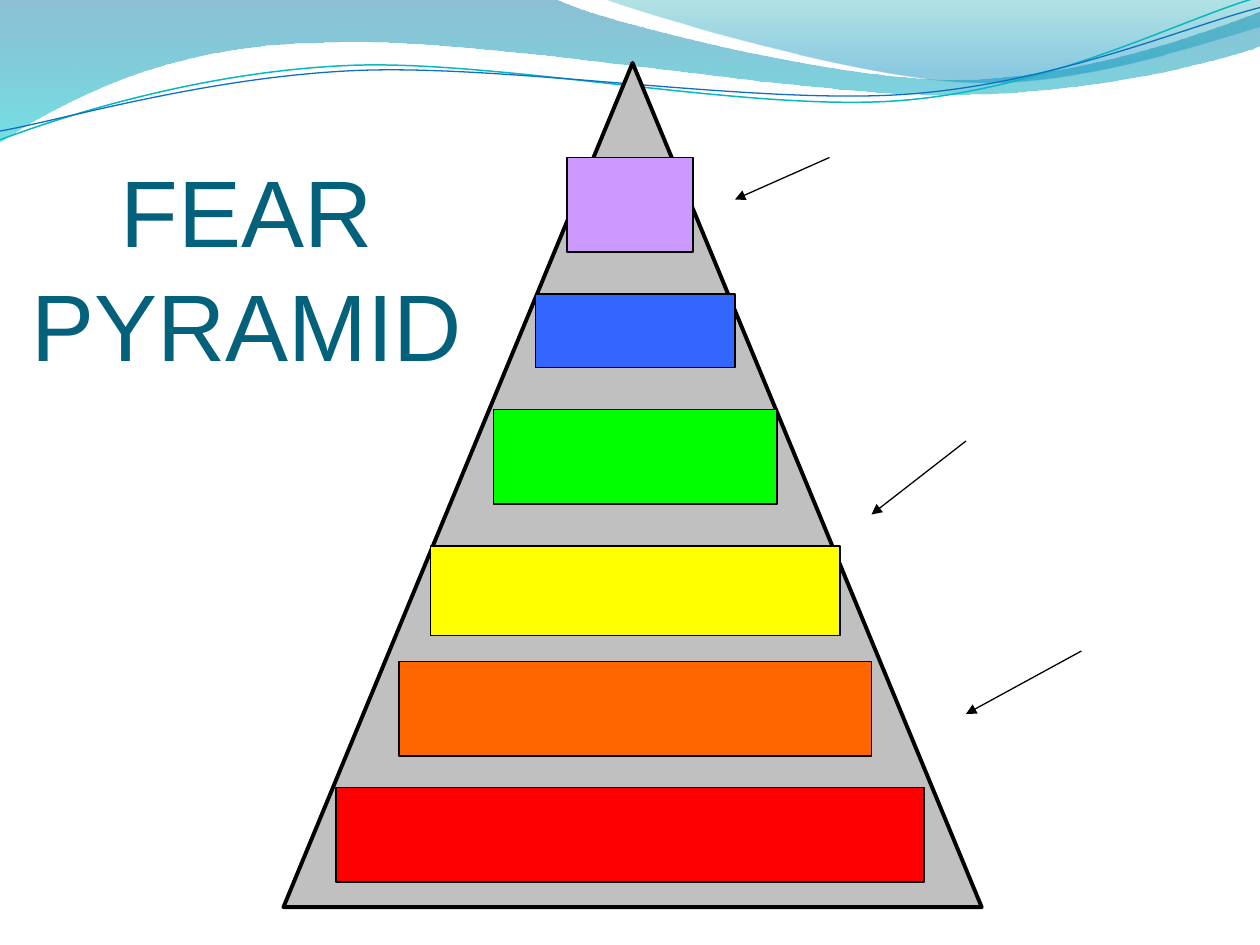
import pptx
import pptx.dml.color
import pptx.enum.shapes
import pptx.enum.text
import pptx.oxml.ns
import pptx.util
from lxml import etree

COLUMNS, ROWS = 120, 90
UNIT = pptx.util.Inches(10) // COLUMNS
HUNDREDTH = pptx.util.Inches(0.01)
SHAPES = pptx.enum.shapes.MSO_SHAPE

BACK_WAVE = [
    [(0, -1)],
    [(440, -1)],
    [(476, 17), (664, 63), (758, 63)],
    [(853, 63), (958, 26), (1000, 9)],
    [(1001, 36)],
    [(983, 44), (870, 76), (746, 75)],
    [(622, 75), (382, 28), (257, 34)],
    [(129, 35), (46, 83), (-1, 113)],
]
FRONT_WAVE = [
    [(479, -1)],
    [(509, 11), (682, 62), (769, 65)],
    [(856, 69), (961, 32), (1000, 21)],
    [(1000, 0)],
]
TEAL_STRAND = [
    [(0, 111)],
    [(48, 93), (158, 57), (277, 52)],
    [(395, 47), (593, 89), (713, 80)],
    [(833, 71), (938, 15), (998, -2)],
]
BLUE_STRAND = [
    [(0, 104)],
    [(47, 96), (164, 61), (283, 56)],
    [(403, 51), (597, 83), (717, 75)],
    [(836, 67), (941, 21), (1000, 6)],
]
LEVELS = [
    ("FF0000", 32, 75, 56, 9),
    ("FF6600", 38, 63, 45, 9),
    ("FFFF00", 41, 52, 39, 8.5),
    ("00FF00", 47, 39, 27, 9),
    ("3366FF", 51, 28, 19, 7),
    ("CC99FF", 54, 15, 12, 9),
]
ARROWS = [(103, 62, 92, 68), (79, 15, 70, 19), (92, 42, 83, 49)]


def rgb(value):
    return pptx.dml.color.RGBColor.from_string(value)


def grid(*cells):
    return [round(cell * UNIT) for cell in cells]


def set_line(line, color, width):
    line.color.rgb = rgb(color)
    line.width = pptx.util.Pt(width)


def add_xml(parent, tag, **attributes):
    return etree.SubElement(parent, pptx.oxml.ns.qn(tag), **attributes)


def bend(shape, segments):
    outline = next(shape.element.iter(pptx.oxml.ns.qn("a:path")))
    steps = iter(list(outline)[1:])
    for segment in segments[1:]:
        lines = [next(steps) for _ in segment]
        if len(lines) == 3:
            curve = etree.Element(pptx.oxml.ns.qn("a:cubicBezTo"))
            lines[0].addprevious(curve)
            for line in lines:
                curve.append(line[0])
                outline.remove(line)


def add_outline(page, segments, close):
    start, *points = [point for segment in segments for point in segment]
    builder = page.shapes.build_freeform(*start, scale=HUNDREDTH)
    builder.add_line_segments(points, close=close)
    shape = builder.convert_to_shape()
    shape.shadow.inherit = False
    bend(shape, segments)
    return shape


def add_wave(page, segments, stops):
    wave = add_outline(page, segments, True)
    wave.line.fill.background()
    wave.fill.gradient()
    wave.fill.gradient_angle = 270
    for stop, (position, color, _) in zip(wave.fill.gradient_stops, stops):
        stop.position = position
        stop.color.rgb = rgb(color)
    colors = wave.element.spPr.iter(pptx.oxml.ns.qn("a:srgbClr"))
    for node, (_, _, opacity) in zip(colors, stops):
        add_xml(node, "a:alpha", val=str(opacity * 1000))


def add_strand(page, segments, color, width):
    strand = add_outline(page, segments, False)
    strand.fill.background()
    set_line(strand.line, color, width)


def add_block(page, kind, color, cells, width):
    block = page.shapes.add_shape(kind, *grid(*cells))
    block.shadow.inherit = False
    block.fill.solid()
    block.fill.fore_color.rgb = rgb(color)
    set_line(block.line, "000000", width)


def add_arrow(page, cells):
    arrow = page.shapes.add_connector(
        pptx.enum.shapes.MSO_CONNECTOR.STRAIGHT, *grid(*cells)
    )
    set_line(arrow.line, "000000", 0.75)
    properties = arrow._element.spPr
    add_xml(properties.find(pptx.oxml.ns.qn("a:ln")), "a:tailEnd", type="triangle")
    add_xml(properties, "a:effectLst")


def add_title(page, text):
    box = page.shapes.add_textbox(*grid(0, 14, 47, 23))
    box.text_frame.word_wrap = True
    para = box.text_frame.paragraphs[0]
    para.alignment = pptx.enum.text.PP_ALIGN.CENTER
    span = para.add_run()
    span.text = text
    span.font.name = "Arial"
    span.font.size = pptx.util.Pt(54)
    span.font.color.rgb = rgb("04617B")


def main():
    deck = pptx.Presentation()
    deck.slide_width, deck.slide_height = grid(COLUMNS, ROWS)
    page = deck.slides.add_slide(deck.slide_layouts[6])
    add_wave(page, BACK_WAVE, [(0, "0074A1", 45), (1, "00C6CF", 55)])
    add_wave(page, FRONT_WAVE, [(0, "00A1A9", 30), (0.8, "008BBF", 45)])
    add_strand(page, TEAL_STRAND, "0AB8BF", 0.85)
    add_strand(page, BLUE_STRAND, "0F6FC6", 0.75)
    add_block(page, SHAPES.ISOSCELES_TRIANGLE, "C0C0C0", (27, 6, 66.5, 80.4), 2.25)
    for color, *cells in LEVELS:
        add_block(page, SHAPES.RECTANGLE, color, cells, 0.75)
    add_title(page, "FEAR PYRAMID")
    for cells in ARROWS:
        add_arrow(page, cells)
    deck.save("out.pptx")


if __name__ == "__main__":
    main()
